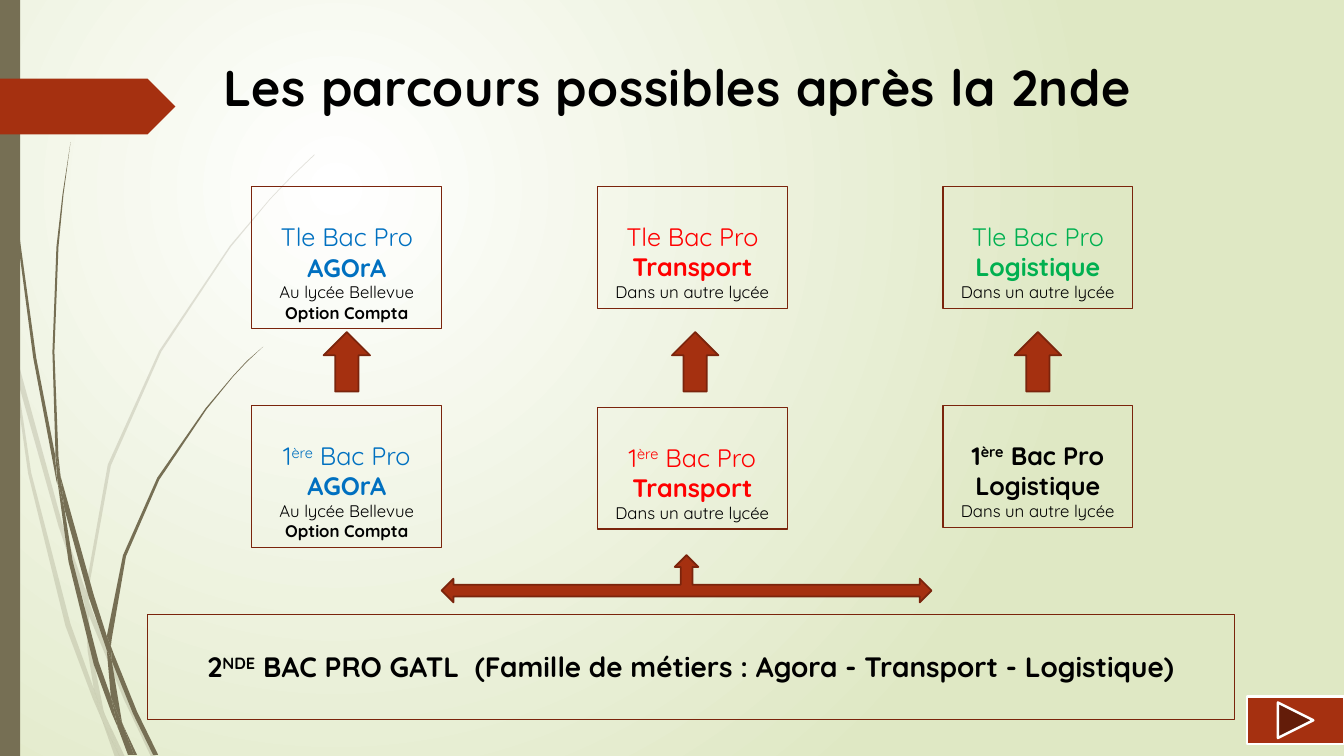
from pptx import Presentation
from pptx import util as u
from pptx.dml import color as c
from pptx.enum import shapes, text
from pptx.oxml import ns, parse_xml

FONT = "Quicksand"
RUST, EDGE, OLIVE, BLACK, WHITE = "A53010", "7A240C", "766F54", "000000", "FFFFFF"
BLUE, RED, GREEN = "0070C0", "FF0000", "00B050"
KIND = shapes.MSO_SHAPE
UNIT = 0.72

PALE_GRASS = [
    [(11, 350), (9, 322), (0, 282), (0, 299), (10, 344)],
    [(58, 522), (84, 599), (85, 586), (62, 520), (14, 345), (17, 376)],
    [(92, 607), (88, 596), (88, 610), (123, 694), (150, 751), (155, 751), (127, 692)],
    [(119, 751), (124, 751), (105, 711)],
    [(93, 683), (70, 619), (31, 469), (17, 376), (11, 350), (28, 470), (65, 621), (92, 693), (101, 714), (99, 707)],
    [(84, 599), (87, 646), (93, 683), (96, 692), (105, 711), (103, 706), (91, 646), (88, 610), (88, 608)],
    [(88, 584), (110, 462), (160, 349), (229, 245), (268, 198), (290, 175), (312, 154), (312, 153), (289, 175),
     (268, 197), (228, 244), (158, 348), (107, 461), (85, 584), (85, 586), (88, 596)],
    [(101, 714), (114, 751), (119, 751)],
    [(88, 608), (88, 610), (88, 596), (85, 586), (84, 599)],
    [(96, 692), (93, 683), (99, 707), (101, 714), (119, 751), (105, 711)],
]
DARK_GRASS = [
    [(7, 110), (17, 233), (33, 355), (56, 477), (57, 481), (55, 457), (55, 453), (36, 355), (19, 232),
     (8, 109), (5, 48), (4, 0), (3, 0), (4, 48)],
    [(88, 592), (106, 645), (106, 631), (93, 590), (60, 472), (64, 505)],
    [(113, 649), (110, 641), (111, 656), (132, 708), (152, 749), (157, 749), (136, 706)],
    [(110, 691), (98, 657), (72, 556), (64, 505), (57, 477), (68, 557), (93, 659), (111, 708), (117, 722), (116, 717)],
    [(60, 472), (58, 453), (54, 349), (58, 245), (63, 193), (70, 141), (62, 193), (56, 245), (52, 349), (55, 449)],
    [(133, 749), (136, 749), (122, 719)],
    [(57, 477), (64, 505), (60, 472), (55, 449), (55, 453)],
    [(111, 633), (125, 552), (158, 476), (205, 406), (231, 374), (245, 359), (261, 344), (245, 358), (231, 373),
     (204, 405), (156, 474), (122, 551), (106, 631), (110, 641)],
    [(117, 722), (127, 749), (131, 749)],
    [(106, 645), (110, 691), (116, 706), (122, 719), (121, 716), (111, 656), (109, 651)],
    [(106, 645), (109, 651), (111, 656), (110, 641), (106, 631)],
    [(116, 706), (110, 691), (116, 717), (117, 722), (130, 749), (133, 749), (122, 719)],
]


def rgb(value):
    """Turn a hex string into a colour."""
    return c.RGBColor.from_string(value)


def style(sp, fill=None, line=None, width=0.75):
    """Set the fill and outline of a shape and remove its shadow."""
    sp.shadow.inherit = False
    if fill:
        sp.fill.solid()
        sp.fill.fore_color.rgb = rgb(fill)
    else:
        sp.fill.background()
    if line:
        sp.line.color.rgb = rgb(line)
        sp.line.width = u.Pt(width)
    else:
        sp.line.fill.background()


def add_shape(s, kind, box, **look):
    """Add a preset shape at a box of left, top, width and height."""
    sp = s.shapes.add_shape(kind, *[u.Pt(v) for v in box])
    style(sp, **look)
    return sp


def add_run(p, words, size, color=BLACK, bold=False, raised=False):
    """Append a formatted run to a paragraph."""
    r = p.add_run()
    r.text = words
    for name, value in {"name": FONT, "size": u.Pt(size), "bold": bold}.items():
        setattr(r.font, name, value)
    r.font.color.rgb = rgb(color)
    if raised:
        r.font._element.set("baseline", "30000")
    return r


def set_frame(tf, anchor, bottom=3.6):
    """Wrap a text frame and centre its first paragraph."""
    values = {"word_wrap": True, "vertical_anchor": anchor, "margin_bottom": u.Pt(bottom)}
    for name, value in values.items():
        setattr(tf, name, value)
    tf.paragraphs[0].alignment = text.PP_ALIGN.CENTER
    return tf.paragraphs[0]


def add_grass(s, pieces, alpha=100):
    """Draw the pieces of a tuft of grass."""
    for piece in pieces:
        pts = [(u.Pt(x * UNIT), u.Pt(y * UNIT)) for x, y in piece]
        builder = s.shapes.build_freeform(*pts[0], scale=1.0)
        builder.add_line_segments(pts[1:], close=True)
        sp = builder.convert_to_shape()
        style(sp, fill=OLIVE)
        if alpha < 100:
            clr = sp._element.spPr.find(".//" + ns.qn("a:srgbClr"))
            clr.append(parse_xml(f'<a:alpha {ns.nsdecls("a")} val="{alpha * 1000}"/>'))


def add_backdrop(s, height):
    """Paint the gradient, the grass, the side band and the tab."""
    s._element.cSld.insert(0, parse_xml(
        f'<p:bg {ns.nsdecls("p", "a")}><p:bgPr><a:gradFill rotWithShape="1"><a:gsLst>'
        '<a:gs pos="0"><a:srgbClr val="FFFFFF"/></a:gs>'
        '<a:gs pos="100000"><a:srgbClr val="DFE8C4"/></a:gs></a:gsLst>'
        '<a:path path="circle"><a:fillToRect l="50000" t="50000" r="100000" b="100000"/></a:path>'
        '</a:gradFill><a:effectLst/></p:bgPr></p:bg>'))
    add_grass(s, PALE_GRASS, alpha=20)
    add_grass(s, DARK_GRASS)
    add_shape(s, KIND.RECTANGLE, (0, 0, 14.4, height), fill=OLIVE)
    add_shape(s, KIND.PENTAGON, (0, 56.2, 125.3, 39.8), fill=RUST)


def add_title(s, box, words):
    """Place and format the title."""
    sp = s.shapes.title
    for name, value in zip(("left", "top", "width", "height"), box):
        setattr(sp, name, u.Pt(value))
    r = add_run(set_frame(sp.text_frame, text.MSO_ANCHOR.MIDDLE), words, 36, bold=True)
    r.font._element.set("spc", "40")


def add_class(s, box, year, track, color, notes, all_bold=False):
    """Add a class box: year, track and notes on where it is taught."""
    sp = add_shape(s, KIND.RECTANGLE, box, line=EDGE)
    p = set_frame(sp.text_frame, text.MSO_ANCHOR.BOTTOM, 4.4)
    add_run(p, year[0], 18, color, all_bold)
    if year[1]:
        add_run(p, year[1], 18, color, all_bold, raised=True)
    add_run(p, " Bac Pro ", 18, color, all_bold)
    add_run(p, track, 18, color, True)
    for i, note in enumerate(notes):
        p = sp.text_frame.add_paragraph()
        p.alignment = text.PP_ALIGN.CENTER
        add_run(p, note, 12, bold=i > 0)


def add_track(s, box, track, color, first_color, notes, drop, shift):
    """Add one column: final year above, an arrow, first year below."""
    left, top, width, height = box
    low = top + 156.3 + drop
    add_class(s, (left, low, width, height), ("1", "ère"), track, first_color, notes, first_color == BLACK)
    add_class(s, box, ("Tle", ""), track, color, notes)
    add_shape(s, KIND.UP_ARROW, (left + width / 2 - 16.6 + shift, top + 104, 33.2, 42.5),
              fill=RUST, line=EDGE, width=1.25)


def add_base(s, box):
    """Add the shared first-stage bar and the arrow that branches from it."""
    left, top, width, _ = box
    sp = add_shape(s, KIND.RECTANGLE, box, line=EDGE)
    p = set_frame(sp.text_frame, text.MSO_ANCHOR.MIDDLE, 4.6)
    add_run(p, "2", 20, bold=True)
    add_run(p, "NDE", 20, bold=True, raised=True)
    add_run(p, " BAC PRO GATL  (Famille de métiers : Agora - Transport - Logistique)", 20, bold=True)
    add_shape(s, KIND.LEFT_RIGHT_UP_ARROW, (left + 210.3, top - 42.5, 350, 33.8),
              fill=RUST, line=EDGE, width=1.25)


def main():
    """Build the slide and save it."""
    prs = Presentation()
    prs.slide_width, prs.slide_height = u.Pt(960), u.Pt(540)
    s = prs.slides.add_slide(prs.slide_layouts[5])
    add_backdrop(s, 540)
    add_base(s, (105.1, 439, 776.9, 74.9))
    home = ["Au lycée Bellevue", "Option Compta"]
    away = ["Dans un autre lycée"]
    tracks = [("AGOrA", BLUE, BLUE, home, 0, 0), ("Transport", RED, RED, away, 1.4, 2),
              ("Logistique", GREEN, BLACK, away, 0, 0)]
    for i, (track, color, first, notes, drop, shift) in enumerate(tracks):
        box = (180 + 246.8 * i, 133.2, 135.5, 72.5 + 14.5 * len(notes))
        add_track(s, box, track, color, first, notes, drop, shift)
    add_title(s, (7.9, 12.3, 952, 99.4), "Les parcours possibles après la 2nde")
    add_shape(s, KIND.ACTION_BUTTON_FORWARD_OR_NEXT, (890.9, 497.6, 69.1, 33.8),
              fill=RUST, line=WHITE, width=1.75)
    prs.save("out.pptx")


if __name__ == "__main__":
    main()
